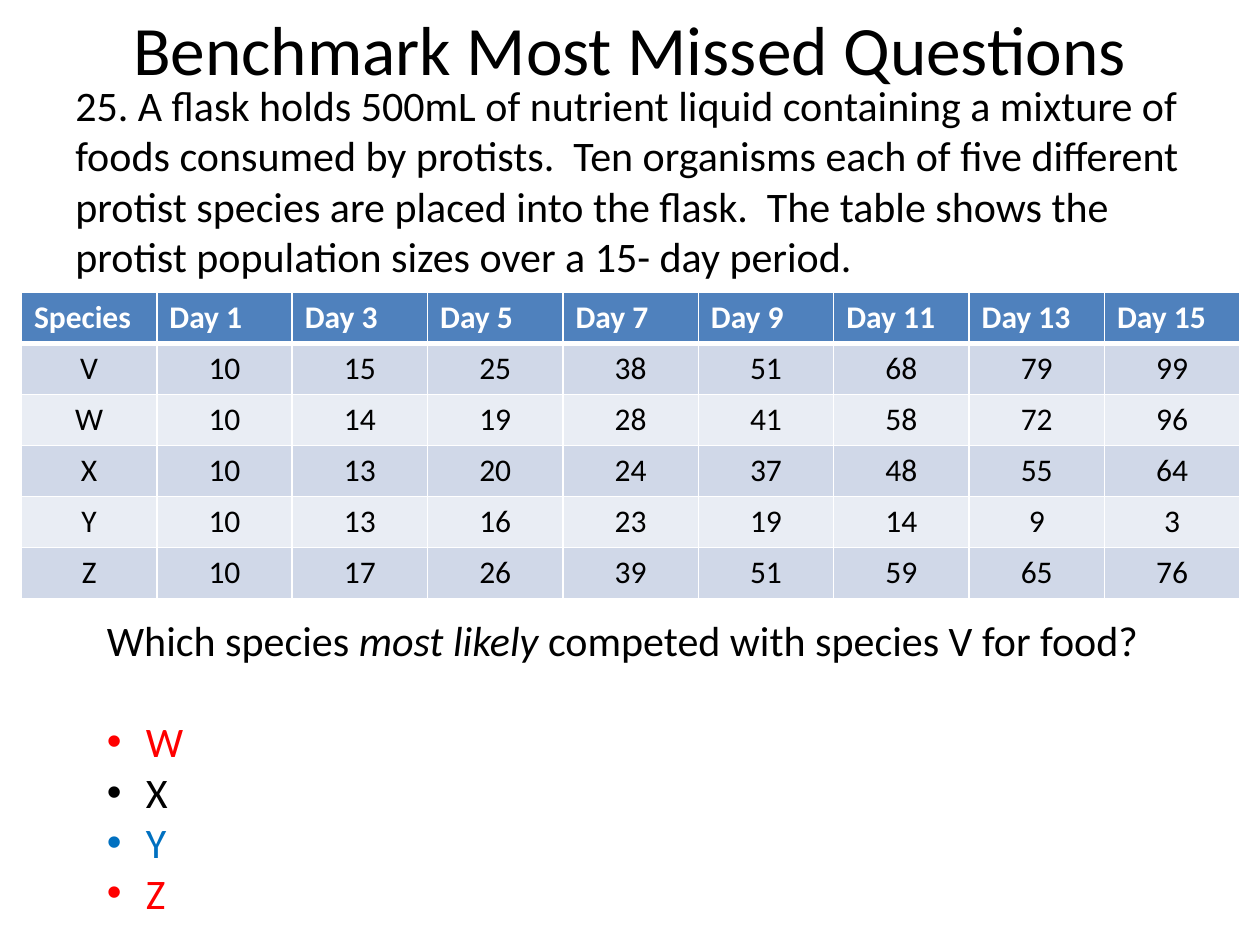
from lxml import etree
from pptx import Presentation
from pptx import util as u
from pptx.dml.color import RGBColor
from pptx.enum import text
from pptx.oxml.ns import qn

COLORS = {
    "black": "000000", "white": "FFFFFF", "red": "FF0000", "blue": "0070C0",
    "header": "4F81BD", "odd": "D0D8E8", "even": "E9EDF4",
}
DAYS = range(1, 16, 2)
POPULATIONS = {
    "V": [10, 15, 25, 38, 51, 68, 79, 99],
    "W": [10, 14, 19, 28, 41, 58, 72, 96],
    "X": [10, 13, 20, 24, 37, 48, 55, 64],
    "Y": [10, 13, 16, 23, 19, 14, 9, 3],
    "Z": [10, 17, 26, 39, 51, 59, 65, 76],
}
ANSWERS = {"W": "red", "X": "black", "Y": "blue", "Z": "red"}
CENTER = text.PP_ALIGN.CENTER


def rgb(name):
    return RGBColor.from_string(COLORS[name])


class SlideBuilder:
    """Holds the text style and the current page."""

    def __init__(self, page, font="Calibri"):
        self.page = page
        self.font = font

    def style(self, paragraph, size, color="black", align=None, bold=False):
        font = paragraph.font
        font.name, font.size, font.bold = self.font, u.Pt(size), bold
        font.color.rgb = rgb(color)
        paragraph.alignment = align

    def text_box(self, left, top, width, height, anchor=text.MSO_ANCHOR.TOP, wrap=True):
        box = self.page.shapes.add_textbox(*map(u.Inches, (left, top, width, height)))
        frame = box.text_frame
        frame.word_wrap = wrap
        frame.vertical_anchor = anchor
        return frame

    def bullet(self, paragraph, indent=0.31):
        properties = paragraph._p.get_or_add_pPr()
        properties.set("marL", str(u.Inches(indent)))
        properties.set("indent", str(-u.Inches(indent)))
        etree.SubElement(properties, qn("a:buFont"), typeface="Arial")
        etree.SubElement(properties, qn("a:buChar"), char="•")

    def borders(self, cell, **widths):
        properties = cell._tc.get_or_add_tcPr()
        for index, side in enumerate("LRTB"):
            line = etree.Element(qn("a:ln" + side), w=str(u.Pt(widths.get(side, 1))))
            fill = etree.SubElement(line, qn("a:solidFill"))
            etree.SubElement(fill, qn("a:srgbClr"), val=COLORS["white"])
            properties.insert(index, line)

    def table(self, rows, left, top, width, height):
        shape = self.page.shapes.add_table(
            len(rows), len(rows[0]), *map(u.Inches, (left, top, width, height)))
        for r, values in enumerate(rows):
            header = r == 0
            for c, value in enumerate(values):
                cell = shape.table.cell(r, c)
                cell.text = str(value)
                cell.fill.solid()
                cell.fill.fore_color.rgb = rgb("header" if header else "odd" if r % 2 else "even")
                self.style(cell.text_frame.paragraphs[0], 18,
                           "white" if header else "black",
                           None if header else CENTER, header)
                self.borders(cell, T=3 if r == 1 else 1, B=3 if header else 1)


def main():
    deck = Presentation()
    deck.slide_width, deck.slide_height = u.Inches(10), u.Inches(7.5)
    builder = SlideBuilder(deck.slides.add_slide(deck.slide_layouts[6]))

    # Title
    title = builder.text_box(0.5, 0, 9, 0.75, text.MSO_ANCHOR.MIDDLE).paragraphs[0]
    title.text = "Benchmark Most Missed Questions"
    builder.style(title, 39.6, align=CENTER)

    # Problem statement
    problem = builder.text_box(0.5, 0.58, 9, 1.75).paragraphs[0]
    problem.text = (
        "25. A flask holds 500mL of nutrient liquid containing a mixture of foods "
        "consumed by protists.  Ten organisms each of five different protist species "
        "are placed into the flask.  The table shows the protist population sizes "
        "over a 15- day period.")
    builder.style(problem, 24)

    # Population table
    header = ["Species"] + [f"Day {day}" for day in DAYS]
    rows = [[species, *counts] for species, counts in POPULATIONS.items()]
    builder.table([header] + rows, 0.17, 2.32, 9.67, 2.43)

    # Question, with one line of space below it
    frame = builder.text_box(0.75, 4.83, 8.46, 2.52, wrap=False)
    question = frame.paragraphs[0]
    builder.style(question, 24)
    question.space_after = u.Pt(29)
    for words in ("Which species ", "most likely", " competed with species V for food?"):
        span = question.add_run()
        span.text = words
        if words == "most likely":
            span.font.italic = True

    # Answer choices
    for answer, color in ANSWERS.items():
        choice = frame.add_paragraph()
        choice.text = answer
        builder.bullet(choice)
        builder.style(choice, 24, color)

    deck.save("out.pptx")


if __name__ == "__main__":
    main()
